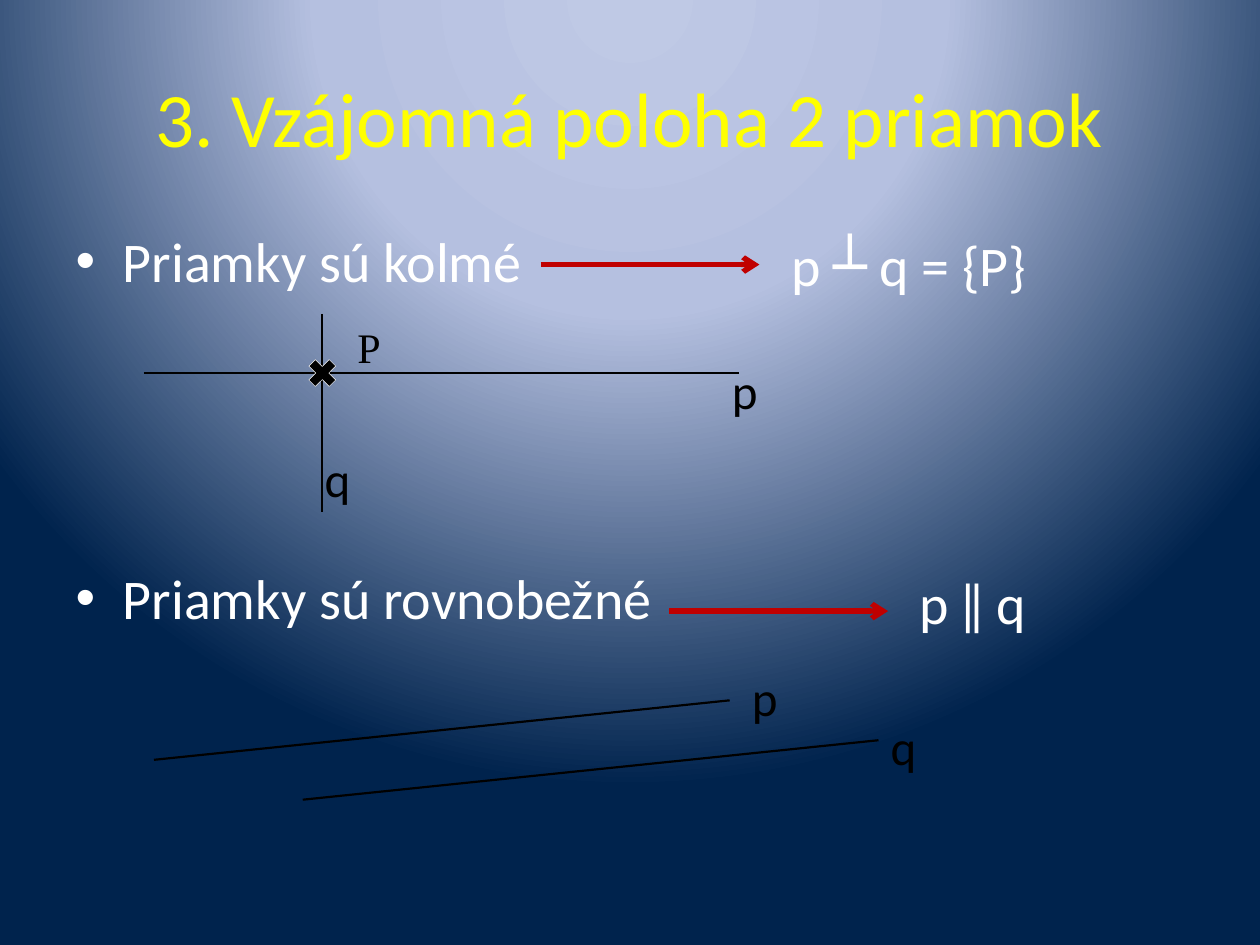
from dataclasses import dataclass

from pptx import Presentation
from pptx.dml.color import RGBColor
from pptx.enum import shapes, text
from pptx.oxml import parse_xml
from pptx.oxml.ns import nsdecls
from pptx.util import Pt


@dataclass(frozen=True)
class Theme:
    title: str = "FFFF00"
    light: str = "FFFFFF"
    dark: str = "000000"
    arrow: str = "C00000"
    gradient: tuple = ((0, "BFC9E5"), (40, "B5C0E0"), (100, "00234D"))
    font: str = "Calibri"
    point_font: str = "Times New Roman"
    title_size: int = 44
    body_size: int = 32
    label_size: int = 28
    point_size: int = 24


THEME = Theme()


def set_background(s):
    """Radial gradient centred above the slide."""
    s.background.fill.gradient()
    grad = s.background._cSld.bg.bgPr.eg_fillProperties
    stops = "".join(
        f'<a:gs pos="{pos * 1000}"><a:srgbClr val="{color}"/></a:gs>'
        for pos, color in THEME.gradient)
    radial = parse_xml(
        f'<a:gradFill {nsdecls("a")} rotWithShape="1"><a:gsLst>{stops}</a:gsLst>'
        '<a:path path="circle"><a:fillToRect l="50000" t="-80000" '
        'r="50000" b="180000"/></a:path></a:gradFill>')
    grad.getparent().replace(grad, radial)


def place(sp, left, top, width, height):
    sp.left, sp.top, sp.width, sp.height = map(Pt, (left, top, width, height))


def add_run(p, words, size, color, font=THEME.font):
    r = p.add_run()
    r.text = words
    r.font.size = Pt(size)
    r.font.name = font
    r.font.color.rgb = RGBColor.from_string(color)


def add_title(s, words):
    sp = s.shapes.title
    place(sp, 36, 21.6, 648, 90)
    tf = sp.text_frame
    tf.vertical_anchor = text.MSO_ANCHOR.MIDDLE
    p = tf.paragraphs[0]
    p.alignment = text.PP_ALIGN.CENTER
    add_run(p, words, THEME.title_size, THEME.title)


def add_body(s):
    sp = s.placeholders[1]
    place(sp, 36, 126, 648, 356.4)
    tf = sp.text_frame
    tf.auto_size = text.MSO_AUTO_SIZE.NONE
    add_run(tf.paragraphs[0], "Priamky sú kolmé", THEME.body_size, THEME.light)

    point = tf.add_paragraph()
    point.space_before = Pt(15.5)
    pPr = point._p.get_or_add_pPr()
    pPr.set("marL", str(Pt(161)))
    pPr.set("indent", "0")
    pPr.append(parse_xml(f'<a:buNone {nsdecls("a")}/>'))
    add_run(point, "P", THEME.point_size, THEME.dark, THEME.point_font)

    parallel = tf.add_paragraph()
    parallel.space_before = Pt(109.5)
    add_run(parallel, "Priamky sú rovnobežné", THEME.body_size, THEME.light)


def add_line(s, x1, y1, x2, y2, color=THEME.dark, width=1.25):
    line = s.shapes.add_connector(
        shapes.MSO_CONNECTOR.STRAIGHT, Pt(x1), Pt(y1), Pt(x2), Pt(y2))
    line.line.color.rgb = RGBColor.from_string(color)
    line.line.width = Pt(width)
    line._element.spPr.append(parse_xml(f'<a:effectLst {nsdecls("a")}/>'))
    return line


def add_arrow(s, x, y, length=125):
    arrow = add_line(s, x, y, x + length, y, THEME.arrow, 3)
    arrow.line._get_or_add_ln().append(
        parse_xml(f'<a:tailEnd {nsdecls("a")} type="arrow"/>'))


def add_text(s, words, left, top, width, height, size, color):
    sp = s.shapes.add_textbox(Pt(left), Pt(top), Pt(width), Pt(height))
    tf = sp.text_frame
    tf.word_wrap = False
    tf.auto_size = text.MSO_AUTO_SIZE.SHAPE_TO_FIT_TEXT
    add_run(tf.paragraphs[0], words, size, color)


def add_label(s, name, left, top):
    add_text(s, name, left, top, 29.5, 41, THEME.label_size, THEME.dark)


def add_formula(s, words, left, top, width):
    add_text(s, words, left, top, width, 46, THEME.body_size, THEME.light)


def add_intersection(s, x, y, size=22.4):
    """Cross mark centred on a point."""
    sp = s.shapes.add_shape(
        shapes.MSO_SHAPE.MATH_MULTIPLY,
        Pt(x - size / 2), Pt(y - size / 2), Pt(size), Pt(size))
    sp.shadow.inherit = False
    sp.fill.solid()
    sp.fill.fore_color.rgb = RGBColor.from_string(THEME.dark)
    sp.line.color.rgb = RGBColor.from_string(THEME.light)
    sp.line.width = Pt(0.25)


def draw_perpendicular(s):
    x, y = 184.2, 213.2
    add_arrow(s, 309, 151.2)
    add_line(s, 82.2, y, 422.4, y)
    add_line(s, x, 179.4, x, 292.4)
    add_intersection(s, x, y)
    add_label(s, "p", 411.2, 202.2)
    add_label(s, "q", 178.4, 253)
    add_formula(s, "p ┴ q = {P}", 445, 128.2, 154)


def draw_parallel(s):
    add_arrow(s, 382.5, 349.2)
    for x, y in ((88, 434.2), (173, 457)):
        add_line(s, x, y, x + 329, y - 34)
    add_label(s, "p", 422.6, 378)
    add_label(s, "q", 501.8, 406)
    add_formula(s, "p ‖ q", 518.4, 321.2, 79.2)


def main():
    prs = Presentation()
    prs.slide_width, prs.slide_height = Pt(720), Pt(540)
    s = prs.slides.add_slide(prs.slide_layouts[1])
    set_background(s)
    add_title(s, "3. Vzájomná poloha 2 priamok")
    add_body(s)
    draw_perpendicular(s)
    draw_parallel(s)
    prs.save("out.pptx")


if __name__ == "__main__":
    main()
